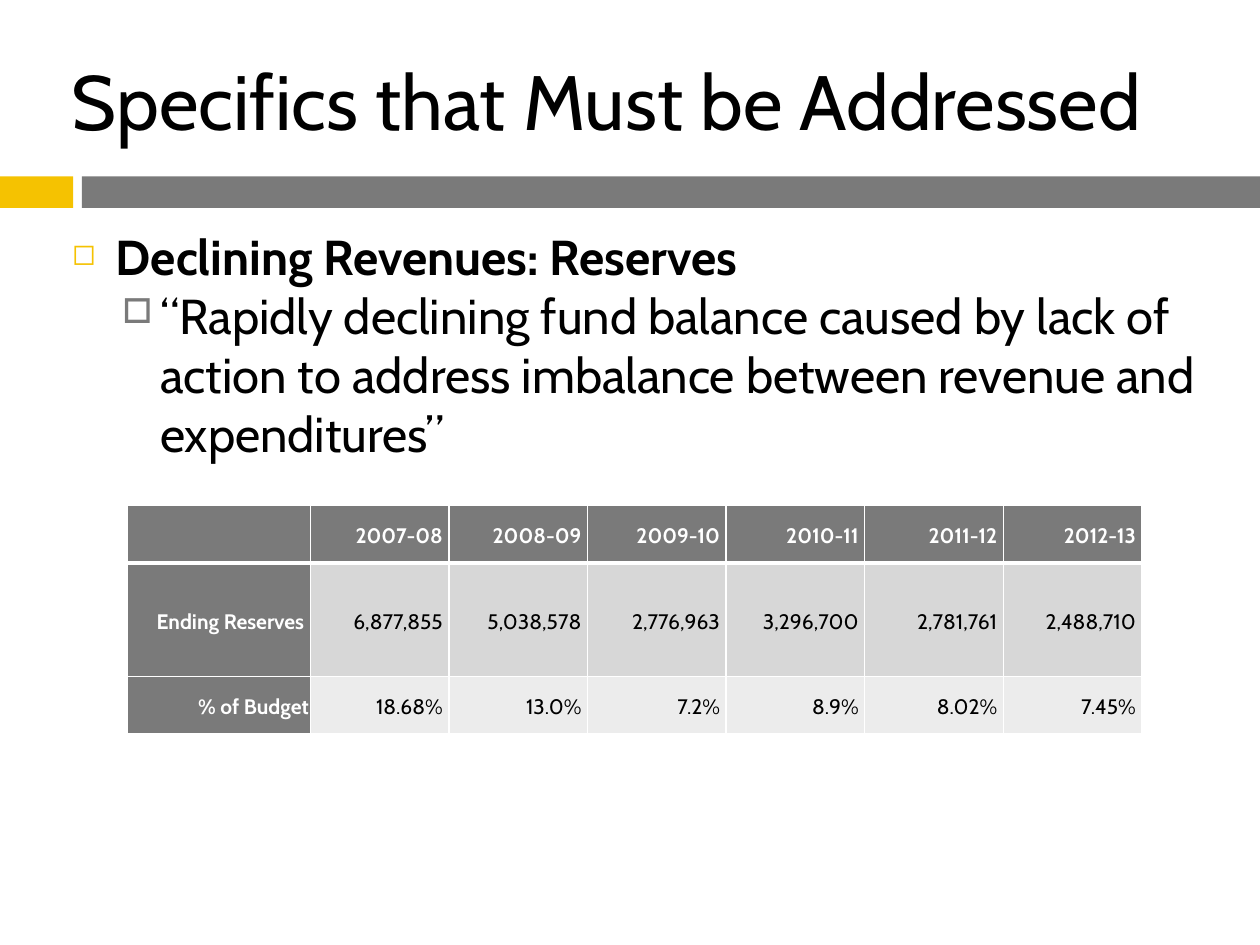
"""Build the slide on declining reserves."""
from lxml import etree
from pptx import Presentation
from pptx.dml.color import RGBColor
from pptx.enum.shapes import MSO_SHAPE
from pptx.enum.text import MSO_ANCHOR, PP_ALIGN
from pptx.oxml.ns import qn
from pptx.util import Pt

RECT = MSO_SHAPE.RECTANGLE
MID, TOP = MSO_ANCHOR.MIDDLE, MSO_ANCHOR.TOP
LEFT, RIGHT = PP_ALIGN.LEFT, PP_ALIGN.RIGHT
FONT = "Cabin"
GOLD, GREY, BLACK, WHITE = "F5C201", "7A7A7A", "000000", "FFFFFF"

TITLE = "Specifics that Must be Addressed"
BODY = [
    ("Declining Revenues: Reserves",
     dict(bold=True, bullet=("◻", GOLD, 60, 25.2, 25.2))),
    ("“Rapidly declining fund balance caused by lack of action to address "
     "imbalance between revenue and expenditures”",
     dict(level=1, bullet=("□", GREY, 70, 50.4, 21.6))),
]
BARS = [(0, 41.8, GOLD), (46.8, 673.2, GREY)]
ROWS = [
    ["", "2007-08 ", "2008-09 ", "2009-10 ", "2010-11 ", "2011-12 ", "2012-13 "],
    ["Ending Reserves ", "6,877,855 ", "5,038,578 ", "2,776,963 ",
     "3,296,700 ", "2,781,761 ", "2,488,710 "],
    ["% of Budget", "18.68% ", "13.0% ", "7.2% ", "8.9% ", "8.02% ", "7.45% "],
]
FILLS = [GREY, "D7D7D7", "ECECEC"]
WIDTHS = [104.4] + [79.2] * 6
HEIGHTS = [32.8, 64.8, 32.8]


def tint(color):
    return RGBColor.from_string(color)


def add_sub(node, tag, **attrs):
    return etree.SubElement(node, qn(tag), attrs)


def write(para, text, size=28, color=BLACK, bold=False, align=LEFT,
          space=1.0, level=0, bullet=None):
    para.alignment, para.line_spacing, para.level = align, space, level
    run = para.add_run()
    run.text = text
    font = run.font
    font.name, font.size, font.bold = FONT, Pt(size), bold
    font.color.rgb = tint(color)
    if bullet:
        mark, hue, scale, left, hang = bullet
        props = para._p.get_or_add_pPr()
        props.set("marL", str(Pt(left)))
        props.set("indent", str(-Pt(hang)))
        add_sub(add_sub(props, "a:buClr"), "a:srgbClr", val=hue)
        add_sub(props, "a:buSzPct", val=str(scale * 1000))
        add_sub(props, "a:buChar", char=mark)


def add_box(slide, left, top, width, height, anchor, items):
    frame = slide.shapes.add_textbox(
        Pt(left), Pt(top), Pt(width), Pt(height)).text_frame
    frame.word_wrap, frame.vertical_anchor = True, anchor
    for i, (text, style) in enumerate(items):
        para = frame.add_paragraph() if i else frame.paragraphs[0]
        write(para, text, **style)


def add_bar(slide, left, width, color):
    bar = slide.shapes.add_shape(RECT, Pt(left), Pt(100.8), Pt(width), Pt(18))
    bar.shadow.inherit = False
    bar.fill.solid()
    bar.fill.fore_color.rgb = tint(color)
    bar.line.fill.background()


def set_edges(cell, row):
    props = cell._tc.get_or_add_tcPr()
    sizes = {"L": 1, "R": 1, "T": 3 if row == 1 else 1, "B": 1 if row else 3}
    for side, size in sizes.items():
        line = add_sub(props, "a:ln" + side, w=str(Pt(size)))
        add_sub(add_sub(line, "a:solidFill"), "a:srgbClr", val=WHITE)


def add_grid(slide):
    grid = slide.shapes.add_table(
        len(ROWS), len(WIDTHS), Pt(72.9), Pt(288.9),
        Pt(sum(WIDTHS)), Pt(sum(HEIGHTS))).table
    for col, width in zip(grid.columns, WIDTHS):
        col.width = Pt(width)
    for r, row in enumerate(ROWS):
        grid.rows[r].height = Pt(HEIGHTS[r])
        for c, text in enumerate(row):
            cell = grid.cell(r, c)
            head = r == 0 or c == 0
            set_edges(cell, r)
            cell.fill.solid()
            cell.fill.fore_color.rgb = tint(GREY if head else FILLS[r])
            cell.vertical_anchor = MID
            cell.margin_left = cell.margin_right = Pt(0.75)
            cell.margin_top = cell.margin_bottom = Pt(0.75)
            if text:
                write(cell.text_frame.paragraphs[0], text, size=12, bold=head,
                      color=WHITE if head else BLACK, align=RIGHT, space=1.15)


def main():
    deck = Presentation()
    deck.slide_width, deck.slide_height = Pt(720), Pt(540)
    slide = deck.slides.add_slide(deck.slide_layouts[6])
    for bar in BARS:
        add_bar(slide, *bar)
    add_box(slide, 34, 18, 642, 78, MID, [(TITLE, dict(size=44))])
    add_box(slide, 34, 126, 657, 394, TOP, BODY)
    add_grid(slide)
    deck.save("out.pptx")


if __name__ == "__main__":
    main()
